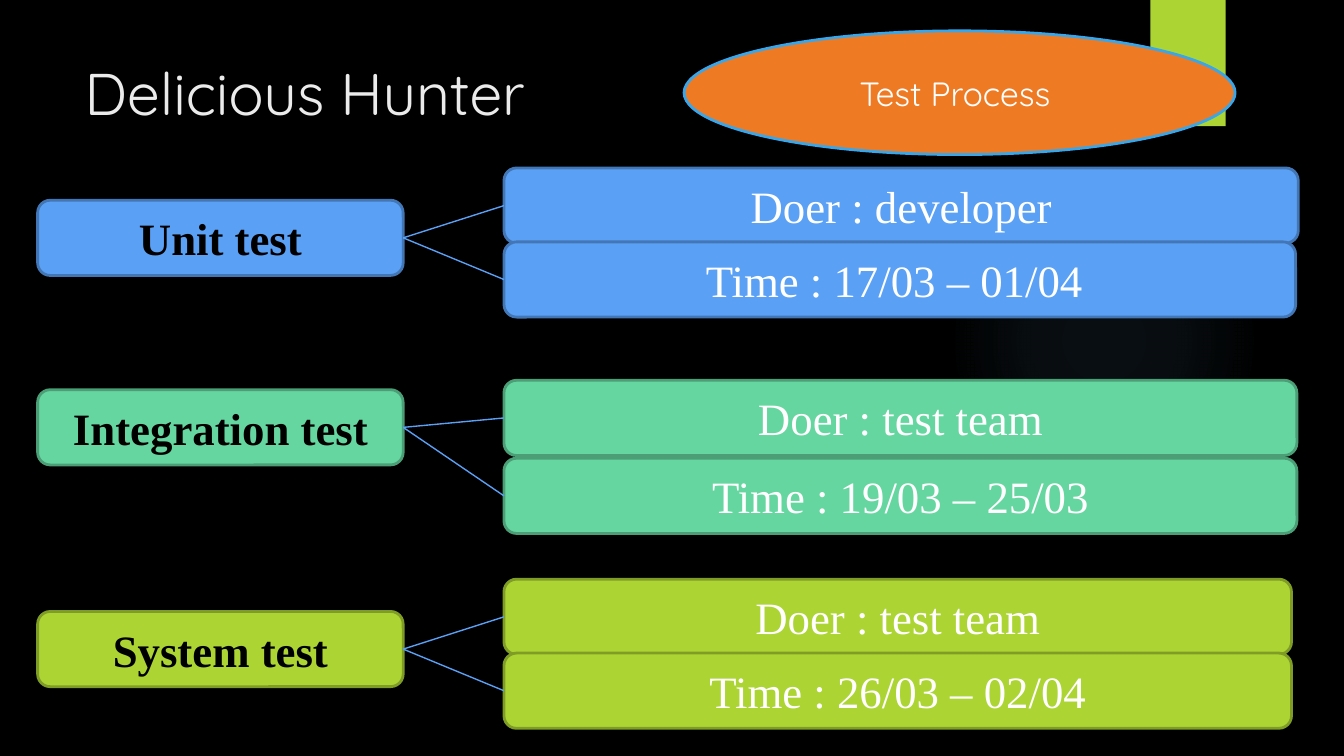
from lxml import etree
from pptx import Presentation
from pptx.dml.color import RGBColor
from pptx.enum.shapes import MSO_CONNECTOR as Connector, MSO_SHAPE as Shape
from pptx.enum.text import MSO_ANCHOR as Anchor, PP_ALIGN as Align
from pptx.oxml import parse_xml
from pptx.oxml.ns import nsdecls, qn
from pptx.util import Inches, Pt

BLUE, GREEN, LIME = "5AA0F5", "65D6A0", "ACD433"
LABEL_LEFT, LABEL_WIDTH = 0.28, 2.72
DETAIL_LEFT, ROW_HEIGHT = 3.75, 0.56

# fill, outline, (label, top), then (detail, top, width) for each detail
STAGES = [
    (BLUE, "4376B5", ("Unit test", 1.49),
     [("Doer : developer", 1.25, 5.91), ("Time : 17/03 – 01/04 ", 1.8, 5.89)]),
    (GREEN, "4B9E76", ("Integration test", 2.9),
     [("Doer : test team", 2.83, 5.9), ("Time : 19/03 – 25/03", 3.41, 5.9)]),
    (LIME, "7F9D26", ("System test", 4.55),
     [("Doer : test team", 4.31, 5.86), ("Time : 26/03 – 02/04", 4.86, 5.86)]),
]


def write(box, text, size, color="FFFFFF", font="Times New Roman", bold=False,
          align=Align.CENTER, anchor=Anchor.MIDDLE):
    frame = box.text_frame
    frame.word_wrap = True
    frame.vertical_anchor = anchor
    para = frame.paragraphs[0]
    para.alignment = align
    span = para.add_run()
    span.text = text
    span.font.name, span.font.size, span.font.bold = font, Pt(size), bold
    span.font.color.rgb = RGBColor.from_string(color)


def add_box(kind, left, top, width, height, fill, outline=None):
    box = page.shapes.add_shape(kind, *map(Inches, (left, top, width, height)))
    box.shadow.inherit = False
    box.fill.solid()
    box.fill.fore_color.rgb = RGBColor.from_string(fill)
    if outline:
        box.line.color.rgb = RGBColor.from_string(outline)
        box.line.width = Pt(1.5)
    else:
        box.line.fill.background()
    return box


deck = Presentation()
deck.slide_width = Inches(10)
deck.slide_height = deck.slide_width * 9 // 16
page = deck.slides.add_slide(deck.slide_layouts[5])
page.background.fill.solid()
page.background.fill.fore_color.rgb = RGBColor.from_string("000000")

# Backdrop: a faint round glow and the corner tab
glow = add_box(Shape.OVAL, 7.06, 1.38, 2.31, 2.31, "7AC4F0")
stops = "".join(
    f'<a:gs pos="{place}000"><a:srgbClr val="7AC4F0"><a:alpha val="{alpha}000"/></a:srgbClr></a:gs>'
    for place, alpha in [(0, 7), (36, 6), (69, 0)])
gradient = parse_xml(
    f'<a:gradFill {nsdecls("a")}><a:gsLst>{stops}</a:gsLst><a:path path="circle">'
    '<a:fillToRect l="50000" t="50000" r="50000" b="50000"/></a:path></a:gradFill>')
solid = glow._element.spPr.find(qn("a:solidFill"))
solid.getparent().replace(solid, gradient)
add_box(Shape.RECTANGLE, 8.56, 0, 0.56, 0.94, LIME)

title = page.shapes.title
title.left, title.top, title.width, title.height = map(Inches, (0.53, 0.37, 7.71, 1.15))
write(title, "Delicious Hunter", 31.5, color="EBEBEB", font="Quicksand",
      align=Align.LEFT, anchor=Anchor.TOP)
page.shapes._spTree.append(title._element)  # in front of the backdrop

topic = add_box(Shape.OVAL, 5.09, 0.23, 4.1, 0.92, "EF7A24", "38A6E9")
write(topic, "Test Process ", 18, font="Quicksand")

for fill, outline, (name, label_top), details in STAGES:
    label = add_box(Shape.ROUNDED_RECTANGLE, LABEL_LEFT, label_top,
                    LABEL_WIDTH, ROW_HEIGHT, fill, outline)
    write(label, name, 24, color="000000", bold=True)
    for text, top, width in details:
        detail = add_box(Shape.ROUNDED_RECTANGLE, DETAIL_LEFT, top,
                         width, ROW_HEIGHT, fill, outline)
        write(detail, text, 24)
        link = page.shapes.add_connector(Connector.STRAIGHT, 0, 0, 0, 0)
        link.begin_connect(label, 3)
        link.end_connect(detail, 1)
        link.line.color.rgb = RGBColor.from_string(BLUE)
        link.line.width = Pt(0.75)
        etree.SubElement(link._element.spPr, qn("a:effectLst"))

deck.save("out.pptx")
